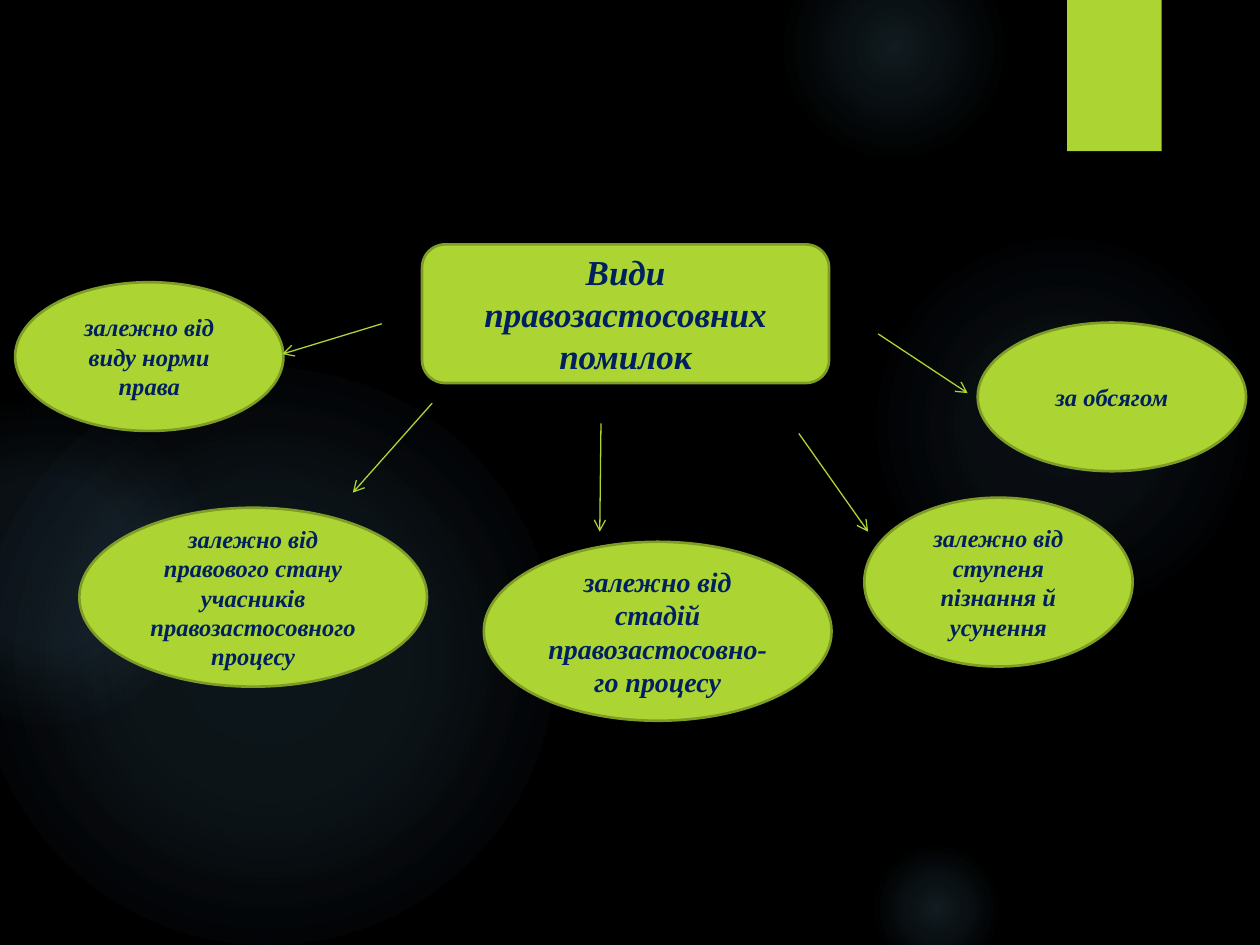
from lxml.etree import SubElement
from pptx import Presentation
from pptx.dml.color import RGBColor
from pptx.enum.shapes import MSO_CONNECTOR, MSO_SHAPE
from pptx.enum.text import MSO_ANCHOR, PP_ALIGN
from pptx.oxml import parse_xml
from pptx.oxml.ns import nsdecls, qn
from pptx.util import Inches, Pt

THEME = {
    "background": RGBColor.from_string("000000"),
    "accent": RGBColor.from_string("ACD433"),
    "outline": RGBColor.from_string("7F9D26"),
    "text": RGBColor.from_string("002060"),
    "glow": "7AC4F0",
    "font": "Times New Roman",
    "heading": Pt(20),
    "large": Pt(16),
    "body": Pt(14),
    "outline_width": Pt(1.5),
    "arrow_width": Pt(0.75),
}


def add_box(page, kind, bounds, fill=None):
    box = page.shapes.add_shape(kind, *[Inches(value) for value in bounds])
    box.shadow.inherit = False
    box.line.fill.background()
    if fill is not None:
        box.fill.solid()
        box.fill.fore_color.rgb = fill
    return box


def glow_fill(stops):
    stop_xml = "".join(
        f'<a:gs pos="{position * 1000}"><a:srgbClr val="{THEME["glow"]}">'
        f'<a:alpha val="{opacity * 1000}"/></a:srgbClr></a:gs>'
        for position, opacity in stops
    )
    return parse_xml(
        f'<a:gradFill {nsdecls("a")} rotWithShape="1"><a:gsLst>{stop_xml}</a:gsLst>'
        '<a:path path="circle"><a:fillToRect l="50000" t="50000" r="50000" b="50000"/>'
        "</a:path></a:gradFill>"
    )


deck = Presentation()
deck.slide_width, deck.slide_height = Inches(10), Inches(7.5)
page = deck.slides.add_slide(deck.slide_layouts[6])
page.background.fill.solid()
page.background.fill.fore_color.rgb = THEME["background"]

# Soft background glows: left, top, diameter, (position, opacity) stops
glows = [
    (6.89, 1.83, 3.08, [(0, 7), (36, 6), (69, 0)]),
    (6.22, -0.5, 1.75, [(0, 14), (36, 7), (73, 0)]),
    (6.89, 6.67, 1.08, [(0, 14), (36, 7), (66, 0)]),
    (-0.17, 2.92, 4.58, [(0, 11), (36, 10), (75, 0)]),
    (-0.92, 3.17, 2.58, [(0, 8), (36, 8), (72, 0)]),
]
for left, top, diameter, stops in glows:
    glow = add_box(page, MSO_SHAPE.OVAL, (left, top, diameter, diameter))
    glow.element.spPr.find(qn("a:prstGeom")).addnext(glow_fill(stops))

# Corner tab
add_box(page, MSO_SHAPE.RECTANGLE, (8.47, 0, 0.75, 1.2), THEME["accent"])

# Central topic and the kinds around it
topics = [
    (MSO_SHAPE.ROUNDED_RECTANGLE, (3.35, 1.94, 3.23, 1.1), "heading",
     "Види правозастосовних помилок"),
    (MSO_SHAPE.OVAL, (0.12, 2.24, 2.13, 1.18), "body", "залежно від виду норми права"),
    (MSO_SHAPE.OVAL, (0.63, 4.03, 2.76, 1.42), "body",
     "залежно від правового стану учасників правозастосовного процесу"),
    (MSO_SHAPE.OVAL, (3.84, 4.3, 2.76, 1.42), "large",
     "залежно від стадій правозастосовно-го процесу"),
    (MSO_SHAPE.OVAL, (6.86, 3.95, 2.13, 1.34), "body",
     "залежно від ступеня пізнання й усунення"),
    (MSO_SHAPE.OVAL, (7.76, 2.56, 2.13, 1.18), "body", "за обсягом"),
]
for kind, bounds, size, wording in topics:
    box = add_box(page, kind, bounds, THEME["accent"])
    box.line.color.rgb = THEME["outline"]
    box.line.width = THEME["outline_width"]
    frame = box.text_frame
    frame.word_wrap = True
    frame.vertical_anchor = MSO_ANCHOR.MIDDLE
    para = frame.paragraphs[0]
    para.alignment = PP_ALIGN.CENTER
    span = para.add_run()
    span.text = wording
    span.font.color.rgb = THEME["text"]
    text_format = {"name": THEME["font"], "size": THEME[size], "bold": True, "italic": True}
    for name, value in text_format.items():
        setattr(span.font, name, value)

# Arrows from the topic towards each kind
arrows = [
    (3.03, 2.57, 2.24, 2.81),
    (3.43, 3.2, 2.8, 3.91),
    (4.77, 3.36, 4.76, 4.22),
    (6.34, 3.44, 6.89, 4.22),
    (6.97, 2.65, 7.68, 3.12),
]
for ends in arrows:
    arrow = page.shapes.add_connector(
        MSO_CONNECTOR.STRAIGHT, *[Inches(value) for value in ends]
    )
    arrow.line.color.rgb = THEME["accent"]
    arrow.line.width = THEME["arrow_width"]
    SubElement(arrow.line._get_or_add_ln(), qn("a:tailEnd"), type="arrow")
    SubElement(arrow.element.spPr, qn("a:effectLst"))

deck.save("out.pptx")
